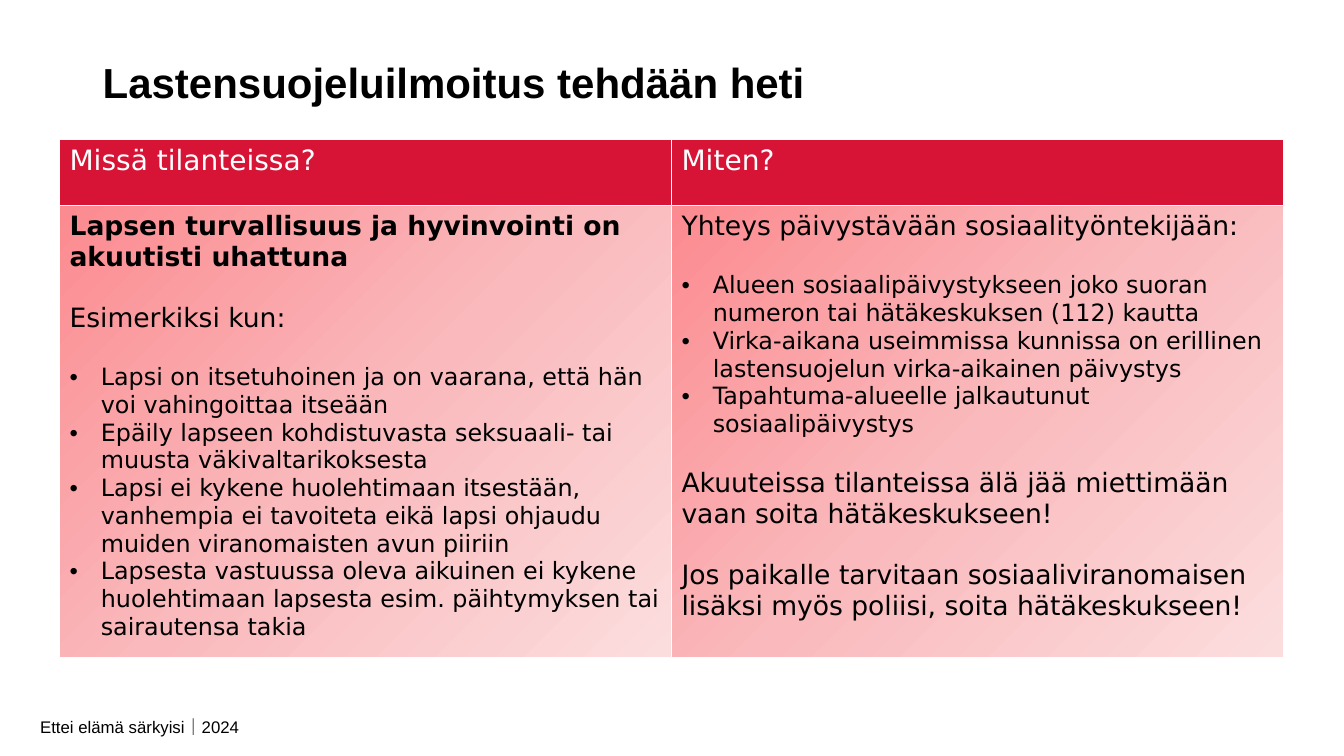
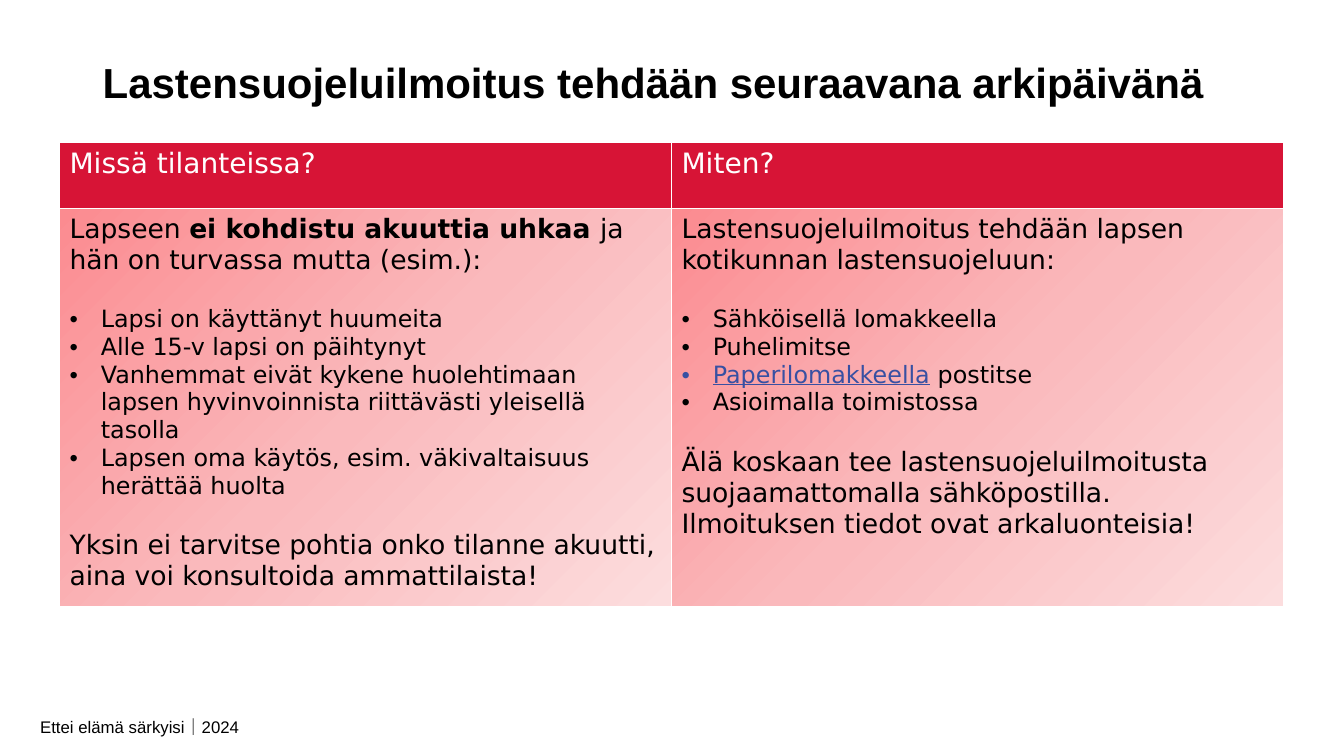
"""Build two slides on when and how to file a child welfare notification."""
from lxml.etree import SubElement
from pptx import Presentation
from pptx.dml.color import RGBColor
from pptx.enum.text import MSO_ANCHOR
from pptx.oxml.ns import qn
from pptx.util import Inches, Pt

BLACK = RGBColor(0x00, 0x00, 0x00)
WHITE = RGBColor(0xFF, 0xFF, 0xFF)
RED = RGBColor(0xD7, 0x14, 0x36)
LINK_BLUE = RGBColor(0x38, 0x50, 0xA2)
GRADIENT = [
    (0, RGBColor(0xFB, 0x8B, 0x90)),
    (50, RGBColor(0xFA, 0xB9, 0xBC)),
    (100, RGBColor(0xFC, 0xDD, 0xDE)),
]
TITLE_FONT = "Arial"
TABLE_FONT = "DejaVu Sans"
FOOTER = "Ettei elämä särkyisi｜2024"
HEADINGS = ["Missä tilanteissa?", "Miten?"]
TEXT, BULLET = "text", "bullet"
SIZES = {TEXT: 19, BULLET: 17}
BLOCK_GAP = Pt(21.5)
TABLE_LEFT, COLUMN_WIDTH, HEADER_HEIGHT = Inches(0.59), Inches(6.07), Inches(0.66)

SLIDES = [
    {
        "title": "Lastensuojeluilmoitus tehdään heti",
        "top": 1.38,
        "body_height": 4.36,
        "columns": [
            [
                (TEXT, [("Lapsen turvallisuus ja hyvinvointi on akuutisti uhattuna", "bold")]),
                (TEXT, [("Esimerkiksi kun:", "")]),
                (BULLET, [("Lapsi on itsetuhoinen ja on vaarana, että hän voi vahingoittaa itseään", "")]),
                (BULLET, [("Epäily lapseen kohdistuvasta seksuaali- tai muusta väkivaltarikoksesta", "")]),
                (BULLET, [("Lapsi ei kykene huolehtimaan itsestään, vanhempia ei tavoiteta eikä lapsi "
                           "ohjaudu muiden viranomaisten avun piiriin", "")]),
                (BULLET, [("Lapsesta vastuussa oleva aikuinen ei kykene huolehtimaan lapsesta esim. "
                           "päihtymyksen tai sairautensa takia", "")]),
            ],
            [
                (TEXT, [("Yhteys päivystävään sosiaalityöntekijään:", "")]),
                (BULLET, [("Alueen sosiaalipäivystykseen joko suoran numeron tai hätäkeskuksen (112) "
                           "kautta", "")]),
                (BULLET, [("Virka-aikana useimmissa kunnissa on erillinen lastensuojelun virka-aikainen "
                           "päivystys", "")]),
                (BULLET, [("Tapahtuma-alueelle jalkautunut sosiaalipäivystys", "")]),
                (TEXT, [("Akuuteissa tilanteissa älä jää miettimään vaan soita hätäkeskukseen!", "")]),
                (TEXT, [("Jos paikalle tarvitaan sosiaaliviranomaisen lisäksi myös poliisi, soita "
                         "hätäkeskukseen!", "")]),
            ],
        ],
    },
    {
        "title": "Lastensuojeluilmoitus tehdään seuraavana arkipäivänä",
        "top": 1.41,
        "body_height": 3.9,
        "columns": [
            [
                (TEXT, [("Lapseen ", ""), ("ei kohdistu akuuttia uhkaa ", "bold"),
                        ("ja hän on turvassa mutta (esim.):", "")]),
                (BULLET, [("Lapsi on käyttänyt huumeita", "")]),
                (BULLET, [("Alle 15-v lapsi on päihtynyt", "")]),
                (BULLET, [("Vanhemmat eivät kykene huolehtimaan lapsen hyvinvoinnista riittävästi "
                           "yleisellä tasolla", "")]),
                (BULLET, [("Lapsen oma käytös, esim. väkivaltaisuus herättää huolta", "")]),
                (TEXT, [("Yksin ei tarvitse pohtia onko tilanne akuutti, aina voi konsultoida "
                         "ammattilaista!", "")]),
            ],
            [
                (TEXT, [("Lastensuojeluilmoitus tehdään lapsen kotikunnan lastensuojeluun:", "")]),
                (BULLET, [("Sähköisellä lomakkeella", "")]),
                (BULLET, [("Puhelimitse", "")]),
                (BULLET, [("Paperilomakkeella", "link"), (" postitse", "")]),
                (BULLET, [("Asioimalla toimistossa", "")]),
                (TEXT, [("Älä koskaan tee lastensuojeluilmoitusta suojaamattomalla sähköpostilla. "
                         "Ilmoituksen tiedot ovat arkaluonteisia!", "")]),
            ],
        ],
    },
]


def add_run(paragraph, text, font, size, color, style=""):
    run = paragraph.add_run()
    run.text = text
    run.font.name = font
    run.font.size = Pt(size)
    run.font.bold = style == "bold"
    run.font.underline = style == "link"
    run.font.color.rgb = LINK_BLUE if style == "link" else color


def style_cell(cell, stops):
    properties = cell._tc.get_or_add_tcPr()
    for side in ("lnL", "lnR", "lnT", "lnB"):
        line = SubElement(properties, qn(f"a:{side}"), w=str(Pt(1)))
        line_fill = SubElement(line, qn("a:solidFill"))
        SubElement(line_fill, qn("a:srgbClr"), val=str(WHITE))
    if len(stops) == 1:
        cell.fill.solid()
        cell.fill.fore_color.rgb = stops[0][1]
        return
    gradient = SubElement(properties, qn("a:gradFill"), rotWithShape="1")
    stop_list = SubElement(gradient, qn("a:gsLst"))
    for position, color in stops:
        stop = SubElement(stop_list, qn("a:gs"), pos=str(position * 1000))
        SubElement(stop, qn("a:srgbClr"), val=str(color))
    SubElement(gradient, qn("a:lin"), ang=str(45 * 60000), scaled="0")


presentation = Presentation()
presentation.slide_width = Inches(13.33)
presentation.slide_height = Inches(7.5)

for content in SLIDES:
    slide = presentation.slides.add_slide(presentation.slide_layouts[6])

    for text, box, size, style in (
        (FOOTER, (0.3, 7.06, 4.65, 0.3), 12, ""),
        (content["title"], (0.92, 0.39, 11.5, 0.85), 30, "bold"),
    ):
        text_frame = slide.shapes.add_textbox(*map(Inches, box)).text_frame
        text_frame.word_wrap = True
        text_frame.vertical_anchor = MSO_ANCHOR.MIDDLE
        add_run(text_frame.paragraphs[0], text, TITLE_FONT, size, BLACK, style)

    body_height = Inches(content["body_height"])
    table = slide.shapes.add_table(
        2, 2, TABLE_LEFT, Inches(content["top"]), COLUMN_WIDTH * 2, HEADER_HEIGHT + body_height
    ).table
    table.horz_banding = False
    table.rows[0].height = HEADER_HEIGHT
    table.rows[1].height = body_height

    for column, (heading, paragraphs) in enumerate(zip(HEADINGS, content["columns"])):
        table.columns[column].width = COLUMN_WIDTH
        header, body = table.cell(0, column), table.cell(1, column)
        style_cell(header, [(0, RED)])
        style_cell(body, GRADIENT)
        add_run(header.text_frame.paragraphs[0], heading, TABLE_FONT, 20, WHITE)

        previous = None
        for kind, runs in paragraphs:
            if previous is None:
                paragraph = body.text_frame.paragraphs[0]
            else:
                paragraph = body.text_frame.add_paragraph()
                if TEXT in (previous, kind):
                    paragraph.space_before = BLOCK_GAP
            if kind == BULLET:
                properties = paragraph._p.get_or_add_pPr()
                properties.set("marL", str(Inches(0.31)))
                properties.set("indent", str(-Inches(0.31)))
                SubElement(properties, qn("a:buFont"), typeface="Arial")
                SubElement(properties, qn("a:buChar"), char="•")
            for text, style in runs:
                add_run(paragraph, text, TABLE_FONT, SIZES[kind], BLACK, style)
            previous = kind

presentation.save("out.pptx")
